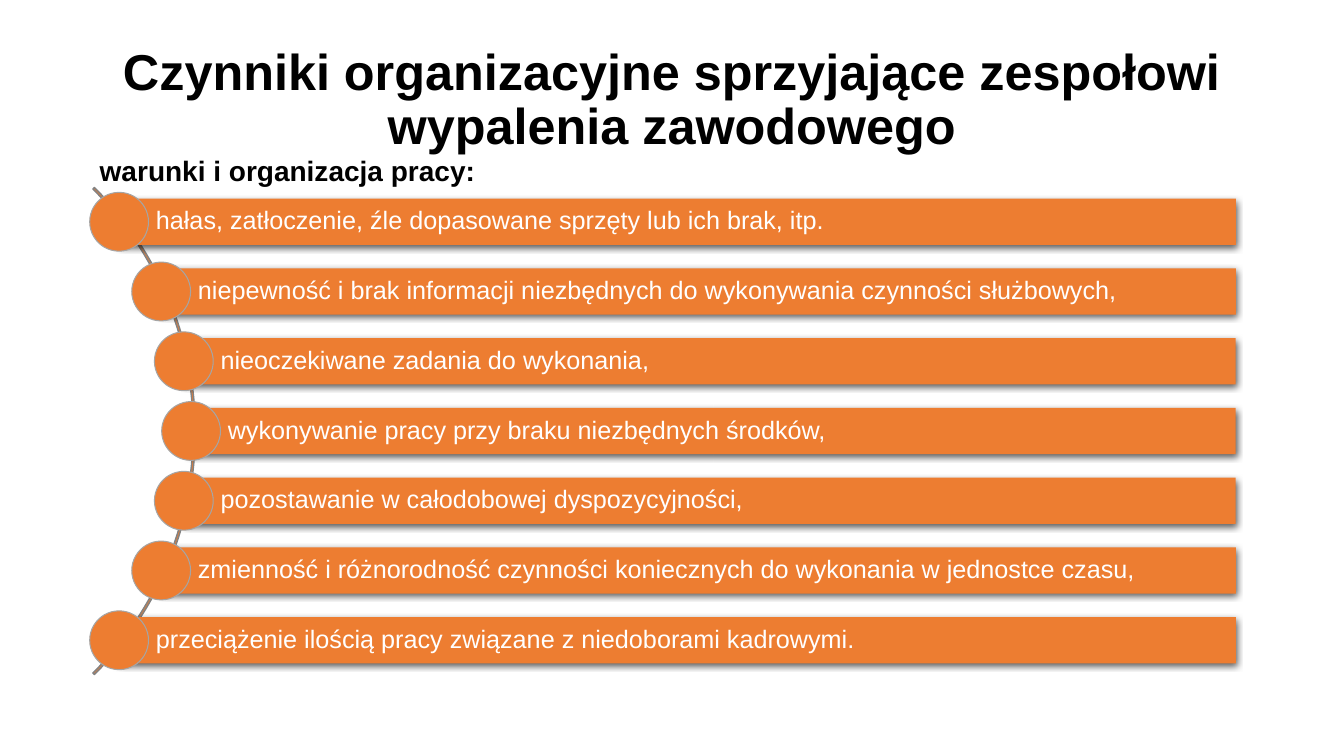
from math import sqrt

from lxml import etree
from pptx import Presentation
from pptx.dml.color import RGBColor
from pptx.enum.shapes import MSO_SHAPE as Shape
from pptx.enum.text import MSO_ANCHOR as Anchor, PP_ALIGN as Align
from pptx.oxml import parse_xml
from pptx.oxml.ns import nsdecls, qn
from pptx.util import Emu, Pt

PX = 9525
ORANGE = RGBColor(0xED, 0x7D, 0x31)
ARC_GREY = RGBColor(0x82, 0x82, 0x82)
RING_GREY = RGBColor(0xA5, 0xA5, 0xA5)
BLACK = RGBColor(0, 0, 0)
WHITE = RGBColor(0xFF, 0xFF, 0xFF)

TITLE = "Czynniki organizacyjne sprzyjające zespołowi wypalenia zawodowego"
CAPTION = "warunki i organizacja pracy:"
FACTORS = [
    "hałas, zatłoczenie, źle dopasowane sprzęty lub ich brak, itp.",
    "niepewność i brak informacji niezbędnych do wykonywania czynności służbowych,",
    "nieoczekiwane zadania do wykonania,",
    "wykonywanie pracy przy braku niezbędnych środków,",
    "pozostawanie w całodobowej dyspozycyjności,",
    "zmienność i różnorodność czynności koniecznych do wykonania w jednostce czasu,",
    "przeciążenie ilością pracy związane z niedoborami kadrowymi.",
]


def px(value):
    return Emu(round(value * PX))


def write(shape, text, size, color, bold, align, anchor, insets):
    frame = shape.text_frame
    frame.word_wrap = True
    frame.vertical_anchor = anchor
    frame.margin_left, frame.margin_top, frame.margin_right, frame.margin_bottom = map(px, insets)
    paragraph = frame.paragraphs[0]
    paragraph.text = text
    paragraph.alignment = align
    paragraph.line_spacing = 0.9
    paragraph.font.name = "Arial"
    paragraph.font.size = Pt(size)
    paragraph.font.bold = bold
    paragraph.font.color.rgb = color


def add_heading(slide, box, text, size, align, anchor):
    heading = slide.shapes.add_textbox(*map(px, box))
    write(heading, text, size, BLACK, True, align, anchor, (10, 5, 10, 5))


def add_solid(slide, kind, box, line=None, width=0.75):
    shape = slide.shapes.add_shape(kind, *map(px, box))
    shape.shadow.inherit = False
    shape.fill.solid()
    shape.fill.fore_color.rgb = ORANGE
    if line is None:
        shape.line.fill.background()
    else:
        shape.line.color.rgb = line
        shape.line.width = Pt(width)
    return shape


def drop_shadow(shape):
    effects = shape.element.spPr.find(qn("a:effectLst"))
    effects.append(parse_xml(
        f'<a:outerShdw {nsdecls("a")} blurRad="57150" dist="19050" dir="5400000" '
        'algn="ctr" rotWithShape="0"><a:srgbClr val="000000">'
        '<a:alpha val="63000"/></a:srgbClr></a:outerShdw>'))


def add_factor_list(slide, box, factors):
    left, top, width, height = box
    arc_size, radius, bar_height, dot = 656, 324, 44, 56
    center_x, center_y = left - 227, top + height / 2
    step = height / len(factors)

    arc = add_solid(slide, Shape.BLOCK_ARC,
                    (center_x - arc_size / 2, center_y - arc_size / 2, arc_size, arc_size),
                    ARC_GREY, 1)
    for index, value in enumerate((189, 27, 0.00316)):
        arc.adjustments[index] = value

    for index, factor in enumerate(factors):
        y = top + step * (index + 0.5)
        x = center_x + sqrt(radius ** 2 - (y - center_y) ** 2)
        bar = add_solid(slide, Shape.RECTANGLE,
                        (x, y - bar_height / 2, left + width - x, bar_height))
        drop_shadow(bar)
        write(bar, factor, 18, WHITE, False, Align.LEFT, Anchor.MIDDLE, (35, 6, 6, 6))
        add_solid(slide, Shape.OVAL, (x - dot / 2, y - dot / 2, dot, dot), RING_GREY)


def main():
    presentation = Presentation()
    presentation.slide_width, presentation.slide_height = px(1280), px(720)
    slide = presentation.slides.add_slide(presentation.slide_layouts[6])
    add_heading(slide, (85, 145, 1104, 63), CAPTION, 20, Align.LEFT, Anchor.TOP)
    add_heading(slide, (88, 21, 1104, 151), TITLE, 36, Align.CENTER, Anchor.MIDDLE)
    add_factor_list(slide, (85, 178, 1092, 465), FACTORS)
    presentation.save("out.pptx")


if __name__ == "__main__":
    main()
